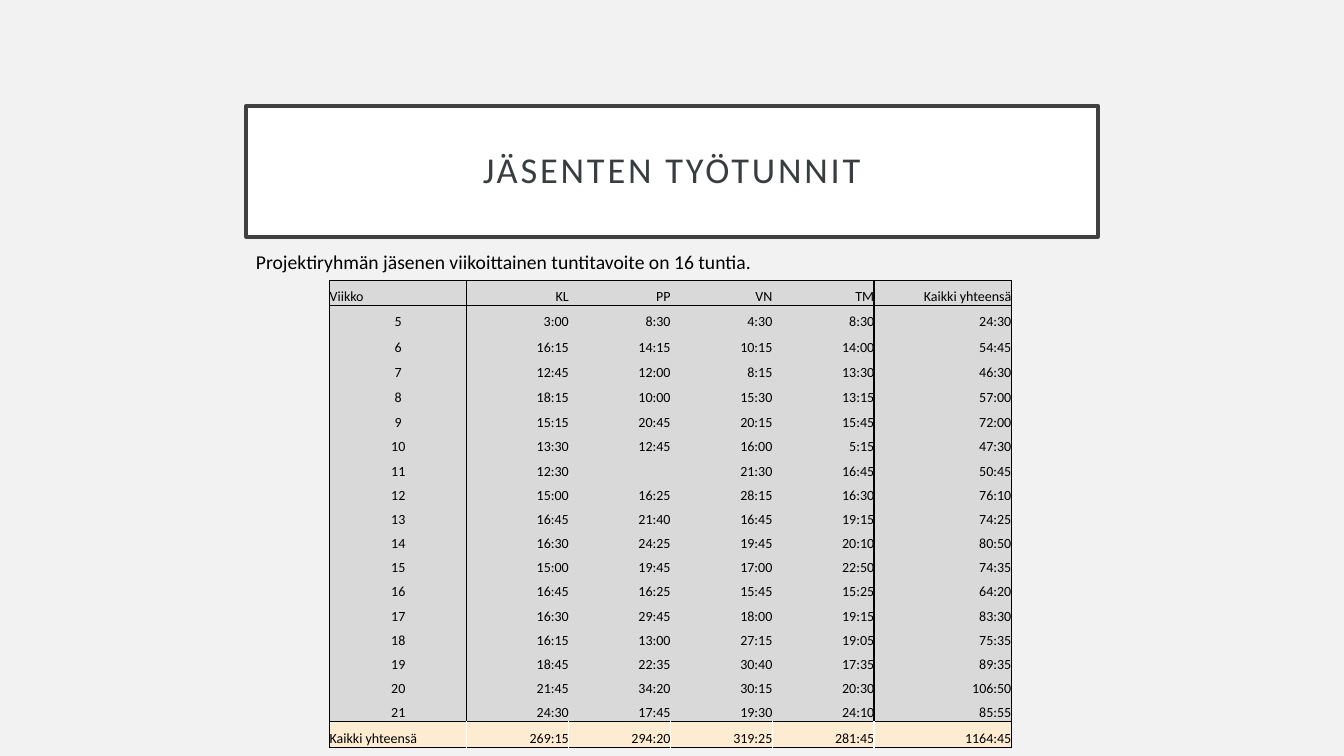
"""Build a slide with a table of weekly working hours for each project member."""
import pptx
import pptx.dml.color
import pptx.enum.shapes
import pptx.enum.text
import pptx.oxml.ns
import pptx.util
from lxml import etree

Inches = pptx.util.Inches
Pt = pptx.util.Pt
RGBColor = pptx.dml.color.RGBColor
ALIGN = pptx.enum.text.PP_ALIGN
ANCHOR = pptx.enum.text.MSO_ANCHOR

FONT = "Calibri"
BACKGROUND = RGBColor(0xF2, 0xF2, 0xF2)
WHITE = RGBColor(0xFF, 0xFF, 0xFF)
BLACK = RGBColor(0x00, 0x00, 0x00)
FRAME = RGBColor(0x40, 0x40, 0x40)
TITLE = RGBColor(0x38, 0x3E, 0x40)
GREY = RGBColor(0xD9, 0xD9, 0xD9)
CREAM = RGBColor(0xFD, 0xEC, 0xD2)

HOURS = [
    ["Viikko", "KL", "PP", "VN", "TM", "Kaikki yhteensä"],
    ["5", "3:00", "8:30", "4:30", "8:30", "24:30"],
    ["6", "16:15", "14:15", "10:15", "14:00", "54:45"],
    ["7", "12:45", "12:00", "8:15", "13:30", "46:30"],
    ["8", "18:15", "10:00", "15:30", "13:15", "57:00"],
    ["9", "15:15", "20:45", "20:15", "15:45", "72:00"],
    ["10", "13:30", "12:45", "16:00", "5:15", "47:30"],
    ["11", "12:30", "", "21:30", "16:45", "50:45"],
    ["12", "15:00", "16:25", "28:15", "16:30", "76:10"],
    ["13", "16:45", "21:40", "16:45", "19:15", "74:25"],
    ["14", "16:30", "24:25", "19:45", "20:10", "80:50"],
    ["15", "15:00", "19:45", "17:00", "22:50", "74:35"],
    ["16", "16:45", "16:25", "15:45", "15:25", "64:20"],
    ["17", "16:30", "29:45", "18:00", "19:15", "83:30"],
    ["18", "16:15", "13:00", "27:15", "19:05", "75:35"],
    ["19", "18:45", "22:35", "30:40", "17:35", "89:35"],
    ["20", "21:45", "34:20", "30:15", "20:30", "106:50"],
    ["21", "24:30", "17:45", "19:30", "24:10", "85:55"],
    ["Kaikki yhteensä", "269:15", "294:20", "319:25", "281:45", "1164:45"],
]
COLUMN_WIDTHS = [1.36, 1.01, 1.01, 1.01, 1.01, 1.36]
ROW_HEIGHTS = [0.25] * 6 + [0.24] * 12 + [0.26]


def style_paragraph(para, size, color, align):
    para.alignment = align
    para.font.name = FONT
    para.font.size = Pt(size)
    para.font.color.rgb = color


def add_border(cell, side, color):
    properties = cell._tc.get_or_add_tcPr()
    line = etree.SubElement(properties, pptx.oxml.ns.qn(f"a:ln{side}"), w=str(Pt(1)))
    if color is None:
        etree.SubElement(line, pptx.oxml.ns.qn("a:noFill"))
    else:
        fill = etree.SubElement(line, pptx.oxml.ns.qn("a:solidFill"))
        etree.SubElement(fill, pptx.oxml.ns.qn("a:srgbClr"), val=str(color))


deck = pptx.Presentation()
deck.slide_width = Inches(13.33)
deck.slide_height = Inches(7.5)
page = deck.slides.add_slide(deck.slide_layouts[6])
page.background.fill.solid()
page.background.fill.fore_color.rgb = BACKGROUND

title = page.shapes.add_shape(
    pptx.enum.shapes.MSO_SHAPE.RECTANGLE,
    Inches(2.44), Inches(1.05), Inches(8.45), Inches(1.3))
title.shadow.inherit = False
title.fill.solid()
title.fill.fore_color.rgb = WHITE
title.line.color.rgb = FRAME
title.line.width = Pt(2.5)
title.text_frame.vertical_anchor = ANCHOR.MIDDLE
title_para = title.text_frame.paragraphs[0]
title_para.line_spacing = 0.9
style_paragraph(title_para, 26, TITLE, ALIGN.CENTER)
title_span = title_para.add_run()
title_span.text = "JÄSENTEN TYÖTUNNIT"
title_span.font._element.set("spc", "200")

goal = page.shapes.add_textbox(Inches(2.44), Inches(2.43), Inches(7.59), Inches(0.34))
goal.text_frame.word_wrap = True
goal_para = goal.text_frame.paragraphs[0]
goal_para.text = "Projektiryhmän jäsenen viikoittainen tuntitavoite on 16 tuntia."
style_paragraph(goal_para, 14, BLACK, ALIGN.LEFT)

table = page.shapes.add_table(
    len(HOURS), len(COLUMN_WIDTHS),
    Inches(3.27), Inches(2.78), Inches(sum(COLUMN_WIDTHS)), Inches(sum(ROW_HEIGHTS))).table
table.first_row = False
table.horz_banding = False
for column, width in zip(table.columns, COLUMN_WIDTHS):
    column.width = Inches(width)

total_row = len(HOURS) - 1
last_column = len(COLUMN_WIDTHS) - 1
for row_index, values in enumerate(HOURS):
    table.rows[row_index].height = Inches(ROW_HEIGHTS[row_index])
    is_total = row_index == total_row
    inner = WHITE if is_total else None
    top = BLACK if row_index in (0, 1, total_row) else None
    bottom = BLACK if row_index in (0, total_row - 1, total_row) else None
    for column_index, value in enumerate(values):
        cell = table.cell(row_index, column_index)
        cell.margin_left = cell.margin_right = cell.margin_top = cell.margin_bottom = 0
        cell.vertical_anchor = ANCHOR.BOTTOM
        left_columns = (0,) if is_total else (0, 1, last_column)
        right_columns = (last_column,) if is_total else (0, last_column - 1, last_column)
        add_border(cell, "L", BLACK if column_index in left_columns else inner)
        add_border(cell, "R", BLACK if column_index in right_columns else inner)
        add_border(cell, "T", top)
        add_border(cell, "B", bottom)
        cell.fill.solid()
        cell.fill.fore_color.rgb = CREAM if is_total else GREY

        if column_index > 0:
            align = ALIGN.RIGHT
        elif row_index in (0, total_row):
            align = ALIGN.LEFT
        else:
            align = ALIGN.CENTER
        para = cell.text_frame.paragraphs[0]
        para.text = value
        style_paragraph(para, 10, BLACK, align)
        if not value:
            etree.SubElement(para._p, pptx.oxml.ns.qn("a:endParaRPr"), sz="1000")

deck.save("out.pptx")
